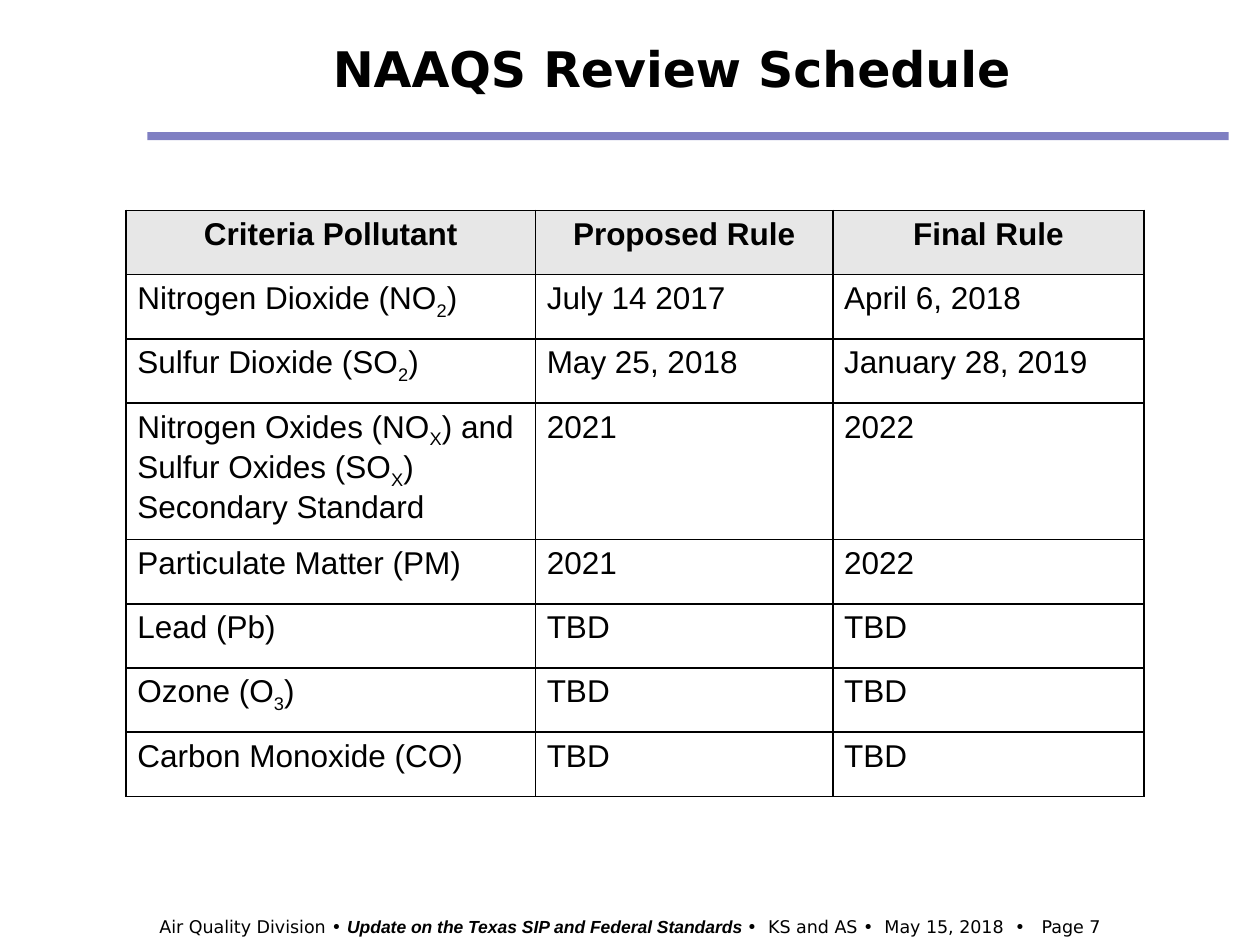
"""Build the NAAQS review schedule slide."""
from dataclasses import dataclass

from lxml import etree
from pptx import Presentation
from pptx.dml.color import RGBColor
from pptx.enum.shapes import MSO_CONNECTOR
from pptx.enum.text import MSO_ANCHOR, MSO_AUTO_SIZE, PP_ALIGN
from pptx.oxml.ns import qn
from pptx.util import Inches, Pt

STRAIGHT = MSO_CONNECTOR.STRAIGHT
MIDDLE = MSO_ANCHOR.MIDDLE
NO_FIT = MSO_AUTO_SIZE.NONE
LEFT, CENTER = PP_ALIGN.LEFT, PP_ALIGN.CENTER
TITLE_ONLY = 5


@dataclass(frozen=True)
class Theme:
    """Colours, fonts and type sizes of the slide."""
    ink: str = "000000"
    rule: str = "000086"
    header: str = "E7E7E7"
    heading_font: str = "DejaVu Sans"
    body_font: str = "Arial"
    title_size: int = 28
    table_size: int = 18
    footer_size: int = 10


class SlideBuilder:
    """Draws styled elements on the current slide."""

    def __init__(self, slide, theme):
        self.slide = slide
        self.theme = theme

    def style(self, font, name, size, bold=False):
        font.name, font.size, font.bold = name, Pt(size), bold
        font.color.rgb = RGBColor.from_string(self.theme.ink)

    def title(self, text, left, top, width, height):
        title = self.slide.shapes.title
        title.left, title.top = Inches(left), Inches(top)
        title.width, title.height = Inches(width), Inches(height)
        frame = title.text_frame
        frame.text = text
        frame.auto_size = NO_FIT
        frame.vertical_anchor = MIDDLE
        para = frame.paragraphs[0]
        para.alignment = CENTER
        self.style(para.font, self.theme.heading_font, self.theme.title_size, True)

    def rule(self, left, right, top, weight, opacity):
        line = self.slide.shapes.add_connector(
            STRAIGHT, Inches(left), Inches(top), Inches(right), Inches(top))
        line.line.width = Pt(weight)
        line.line.color.rgb = RGBColor.from_string(self.theme.rule)
        properties = line._element.spPr
        color = properties.find(".//" + qn("a:srgbClr"))
        etree.SubElement(color, qn("a:alpha"), val=str(opacity * 1000))
        etree.SubElement(properties, qn("a:effectLst"))

    def footer(self, spans, left, top, width, height):
        box = self.slide.shapes.add_textbox(
            Inches(left), Inches(top), Inches(width), Inches(height))
        box.text_frame.word_wrap = True
        para = box.text_frame.paragraphs[0]
        para.alignment = CENTER
        for text, emphasis in spans:
            span = para.add_run()
            span.text = text
            name = self.theme.body_font if emphasis else self.theme.heading_font
            self.style(span.font, name, self.theme.footer_size, emphasis)
            span.font.italic = emphasis

    def borders(self, cell, weight):
        properties = cell._tc.get_or_add_tcPr()
        for side in ("lnL", "lnR", "lnT", "lnB"):
            line = etree.SubElement(properties, qn("a:" + side), w=str(Pt(weight)))
            fill = etree.SubElement(line, qn("a:solidFill"))
            etree.SubElement(fill, qn("a:srgbClr"), val=self.theme.ink)

    def cell(self, cell, text, is_header):
        """Fill a cell; text between bars is set as subscript."""
        cell.margin_left = cell.margin_right = Inches(0.09)
        cell.margin_top = cell.margin_bottom = Inches(0.05)
        self.borders(cell, 1)
        if is_header:
            cell.fill.solid()
            cell.fill.fore_color.rgb = RGBColor.from_string(self.theme.header)
        else:
            cell.fill.background()
        para = cell.text_frame.paragraphs[0]
        para.alignment = CENTER if is_header else LEFT
        self.style(para.font, self.theme.body_font, self.theme.table_size, is_header)
        for index, part in enumerate(text.split("|")):
            span = para.add_run()
            span.text = part
            if index % 2:
                span.font._element.set("baseline", "-25000")

    def table(self, rows, left, top, widths, row_height):
        table = self.slide.shapes.add_table(
            len(rows), len(widths), Inches(left), Inches(top),
            Inches(sum(widths)), Inches(row_height * len(rows))).table
        table.first_row = table.horz_banding = False
        for column, width in zip(table.columns, widths):
            column.width = Inches(width)
        for row_index, row in enumerate(rows):
            table.rows[row_index].height = Inches(row_height)
            for column_index, text in enumerate(row):
                self.cell(table.cell(row_index, column_index), text, row_index == 0)


SCHEDULE = [
    ("Criteria Pollutant", "Proposed Rule", "Final Rule"),
    ("Nitrogen Dioxide (NO|2|)", "July 14 2017", "April 6, 2018"),
    ("Sulfur Dioxide (SO|2|)", "May 25, 2018", "January 28, 2019"),
    ("Nitrogen Oxides (NO|X|) and Sulfur Oxides (SO|X|) Secondary Standard",
     "2021", "2022"),
    ("Particulate Matter (PM)", "2021", "2022"),
    ("Lead (Pb)", "TBD", "TBD"),
    ("Ozone (O|3|)", "TBD", "TBD"),
    ("Carbon Monoxide (CO)", "TBD", "TBD"),
]
FOOTER = [
    ("Air Quality Division • ", False),
    ("Update on the Texas SIP and Federal Standards ", True),
    ("•  KS and AS •  May 15, 2018  •   Page 7", False),
]


def main():
    deck = Presentation()
    deck.slide_width, deck.slide_height = Inches(10), Inches(7.5)
    page = deck.slides.add_slide(deck.slide_layouts[TITLE_ONLY])
    builder = SlideBuilder(page, Theme())
    builder.rule(1.17, 9.75, 1.08, weight=4.5, opacity=50)
    builder.footer(FOOTER, 0, 7.22, 10, 0.27)
    builder.title("NAAQS Review Schedule", 1.58, 0.08, 7.5, 0.92)
    builder.table(SCHEDULE, 1, 1.67, widths=(3.25, 2.36, 2.47), row_height=0.51)
    deck.save("out.pptx")


if __name__ == "__main__":
    main()
